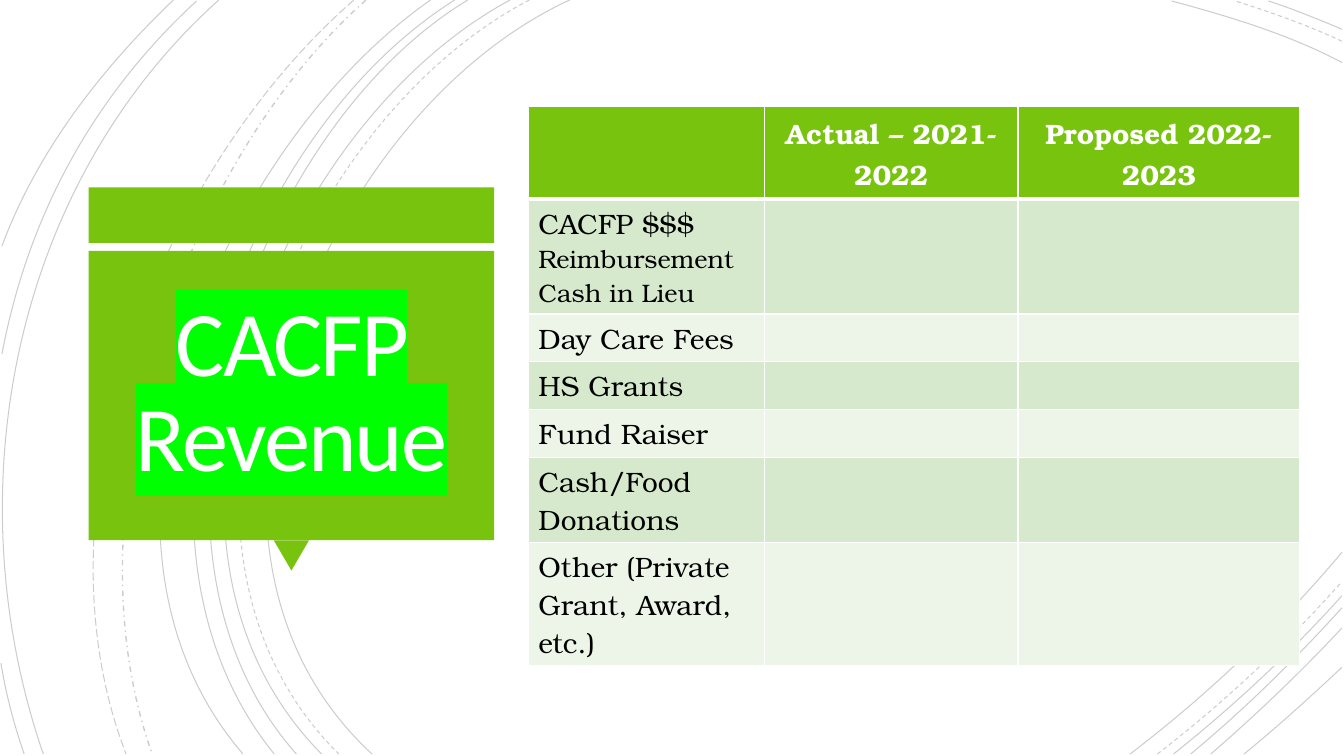
from dataclasses import dataclass

from lxml.etree import SubElement
from pptx import Presentation
from pptx.dml.color import RGBColor
from pptx.enum.dml import MSO_LINE as Dash
from pptx.enum.shapes import MSO_SHAPE as Preset
from pptx.enum.text import MSO_ANCHOR as Anchor, MSO_AUTO_SIZE as AutoSize, PP_ALIGN as Align
from pptx.oxml.ns import qn
from pptx.oxml.xmlchemy import OxmlElement
from pptx.util import Inches, Pt


@dataclass(frozen=True)
class Theme:
    green: str = "78C30D"
    highlight: str = "00FF00"
    title_text: str = "FFFEFF"
    white: str = "FFFFFF"
    black: str = "000000"
    bands: tuple = ("D6E9CC", "ECF5E7")
    title_font: str = "Calibri"
    table_font: str = "TeX Gyre Bonum"
    title_size: int = 66
    table_size: int = 20
    detail_size: int = 18
    gap_size: int = 16


THEME = Theme()
WIDTH, HEIGHT = 13.33, 7.5
TOP, BOTTOM, RIGHT = 0, 7.48, 13.31

# Each arc: start, two control points, end
ARCS = {
    (Dash.SOLID, 0.75): [
        ((5.65, TOP), (3.15, 1.15), (1.43, 5.4), (3.69, BOTTOM)),
        ((5.06, TOP), (2.7, 1.27), (1.1, 5.37), (3.19, BOTTOM)),
        ((4.64, TOP), (2.44, 1.33), (1.1, 5.41), (2.94, BOTTOM)),
        ((4.51, TOP), (2.31, 1.38), (0.97, 5.33), (2.72, BOTTOM)),
        ((4.27, TOP), (2.17, 1.47), (0.53, 5.29), (2.41, BOTTOM)),
        ((2.17, TOP), (0.11, 1.85), (-0.46, 4.9), (0.43, BOTTOM)),
        ((1.95, 0.01), (0.92, 0.96), (0.28, 2.14), (0.02, 3.51)),
        ((0.01, 6.58), (0.06, 6.89), (0.14, 7.19), (0.24, BOTTOM)),
        ((1.72, TOP), (1, 0.69), (0.37, 1.5), (0.02, 2.44)),
        ((RIGHT, 0.62), (12.78, 0.34), (12.18, 0.16), (11.62, 0.01)),
        ((RIGHT, 0.29), (13.07, 0.19), (12.83, 0.09), (12.58, 0.01)),
        ((11.21, BOTTOM), (11.97, 6.9), (12.69, 6.22), (RIGHT, 5.48)),
        ((11.64, BOTTOM), (12.23, 7.01), (12.8, 6.48), (RIGHT, 5.91)),
        ((11.81, BOTTOM), (12.34, 7.04), (12.84, 6.55), (RIGHT, 6.03)),
        ((12.01, BOTTOM), (12.46, 7.09), (12.9, 6.67), (RIGHT, 6.23)),
        ((12.34, BOTTOM), (12.67, 7.21), (12.99, 6.92), (RIGHT, 6.62)),
    ],
    (Dash.DASH, 0.75): [
        ((5.25, TOP), (2.85, 1.25), (1.23, 5.37), (3.36, BOTTOM)),
        ((RIGHT, 0.41), (12.97, 0.25), (12.6, 0.12), (12.25, 0.01)),
        ((11.48, BOTTOM), (12.13, 6.98), (12.75, 6.4), (RIGHT, 5.77)),
    ],
    (Dash.DASH_DOT, 1): [((3.63, TOP), (1.76, 1.66), (0.65, 5.09), (1.51, BOTTOM))],
    (Dash.LONG_DASH, 0.75): [((3.51, TOP), (1.57, 1.69), (0.29, 4.99), (1.25, BOTTOM))],
}

HEADERS = ["", "Actual – 2021-2022", "Proposed 2022-2023"]
SOURCES = [
    (0.44 + 0.64, [("CACFP $$$", THEME.table_size), (" ", THEME.gap_size),
                   ("Reimbursement Cash in Lieu", THEME.detail_size)]),
    (0.44, [("Day Care Fees", THEME.table_size)]),
    (0.44, [("HS Grants", THEME.table_size)]),
    (0.44, [("Fund Raiser", THEME.table_size)]),
    (0.75, [("Cash/Food Donations", THEME.table_size)]),
    (1.08, [("Other (Private Grant, Award, etc.)", THEME.table_size)]),
]
HEADER_HEIGHT = 0.74
COLUMN_SHARES = (0.306, 0.329, 0.365)


def rgb(value):
    return RGBColor.from_string(value)


def add_span(para, text, font, size, color, bold=False):
    span = para.add_run()
    span.text = text
    span.font.name, span.font.size, span.font.bold = font, Pt(size), bold
    span.font.color.rgb = rgb(color)
    return span


def add_arc(slide, points, dash, weight):
    """Draw one faint Bézier arc through a freeform of its control points."""
    start, *others = [(Inches(x), Inches(y)) for x, y in points]
    builder = slide.shapes.build_freeform(*start)
    builder.add_line_segments(others, close=False)
    arc = builder.convert_to_shape()
    arc.shadow.inherit = False
    arc.fill.background()
    arc.line.width, arc.line.dash_style = Pt(weight), dash
    arc.line.color.rgb = rgb(THEME.black)
    color = next(arc.line._get_or_add_ln().iter(qn("a:srgbClr")))
    SubElement(color, qn("a:alpha"), val="20000")

    segments = list(arc._element.iter(qn("a:lnTo")))
    outline = segments[0].getparent()
    curve = SubElement(outline, qn("a:cubicBezTo"))
    for segment in segments:
        curve.append(segment[0])
        outline.remove(segment)


def add_backdrop(slide):
    for (dash, weight), arcs in ARCS.items():
        for points in arcs:
            add_arc(slide, points, dash, weight)


def add_title_panel(slide, left, top, width, height):
    """Green band, panel and pointer, with the title on the panel."""
    band, gap, pointer, pointer_width, margin = 0.55, 0.08, 0.3, 0.35, 0.09
    panel_top = top + band + gap
    panel_height = height - band - gap - pointer
    parts = [
        (Preset.RECTANGLE, left, top, width, band),
        (Preset.ISOSCELES_TRIANGLE, left + (width - pointer_width) / 2,
         top + height - pointer, pointer_width, pointer),
        (Preset.RECTANGLE, left, panel_top, width, panel_height),
    ]
    for preset, *box in parts:
        part = slide.shapes.add_shape(preset, *map(Inches, box))
        part.shadow.inherit = False
        part.fill.solid()
        part.fill.fore_color.rgb = rgb(THEME.green)
        part.line.fill.background()
        if preset == Preset.ISOSCELES_TRIANGLE:
            part.rotation = 180

    title = slide.shapes.title
    title.left, title.top = Inches(left + margin), Inches(panel_top + margin)
    title.width, title.height = Inches(width - 2 * margin), Inches(panel_height - 2 * margin)
    slide.shapes._spTree.append(title._element)  # bring to front
    frame = title.text_frame
    frame.word_wrap, frame.auto_size = True, AutoSize.NONE
    frame.vertical_anchor = Anchor.MIDDLE
    frame.margin_left = frame.margin_right = frame.margin_top = frame.margin_bottom = Inches(0.25)
    para = frame.paragraphs[0]
    para.alignment, para.line_spacing = Align.CENTER, 0.85
    span = add_span(para, "CACFP Revenue", THEME.title_font, THEME.title_size, THEME.title_text)
    properties = span.font._element
    properties.set("spc", "-150")
    highlight = OxmlElement("a:highlight")
    SubElement(highlight, qn("a:srgbClr"), val=THEME.highlight)
    properties.find(qn("a:solidFill")).addnext(highlight)


def style_cell(cell, fill, bottom=1):
    properties = cell._tc.get_or_add_tcPr()
    for side, weight in (("L", 1), ("R", 1), ("T", 1), ("B", bottom)):
        border = SubElement(properties, qn(f"a:ln{side}"), w=str(Pt(weight)))
        SubElement(SubElement(border, qn("a:solidFill")), qn("a:srgbClr"), val=THEME.white)
    cell.fill.solid()
    cell.fill.fore_color.rgb = rgb(fill)


def add_revenue_table(slide, left, top, width):
    heights = [HEADER_HEIGHT] + [height for height, _ in SOURCES]
    box = map(Inches, (left, top, width, sum(heights)))
    table = slide.shapes.add_table(len(heights), len(HEADERS), *box).table
    for column, share in zip(table.columns, COLUMN_SHARES):
        column.width = Inches(width * share)
    for row, height in zip(table.rows, heights):
        row.height = Inches(height)

    for cell, text in zip(table.rows[0].cells, HEADERS):
        style_cell(cell, THEME.green, bottom=3)
        if text:
            para = cell.text_frame.paragraphs[0]
            para.alignment = Align.CENTER
            add_span(para, text, THEME.table_font, THEME.table_size, THEME.white, bold=True)

    for index, (_, spans) in enumerate(SOURCES):
        cells = table.rows[index + 1].cells
        for cell in cells:
            style_cell(cell, THEME.bands[index % 2], bottom=1)
        for text, size in spans:
            add_span(cells[0].text_frame.paragraphs[0], text, THEME.table_font, size, THEME.black)


def main():
    deck = Presentation()
    deck.slide_width, deck.slide_height = Inches(WIDTH), Inches(HEIGHT)
    page = deck.slides.add_slide(deck.slide_layouts[5])
    add_backdrop(page)
    add_title_panel(page, left=0.88, top=1.86, width=4.02, height=3.8)
    add_revenue_table(page, left=5.24, top=1.06, width=7.65)
    deck.save("out.pptx")


if __name__ == "__main__":
    main()
